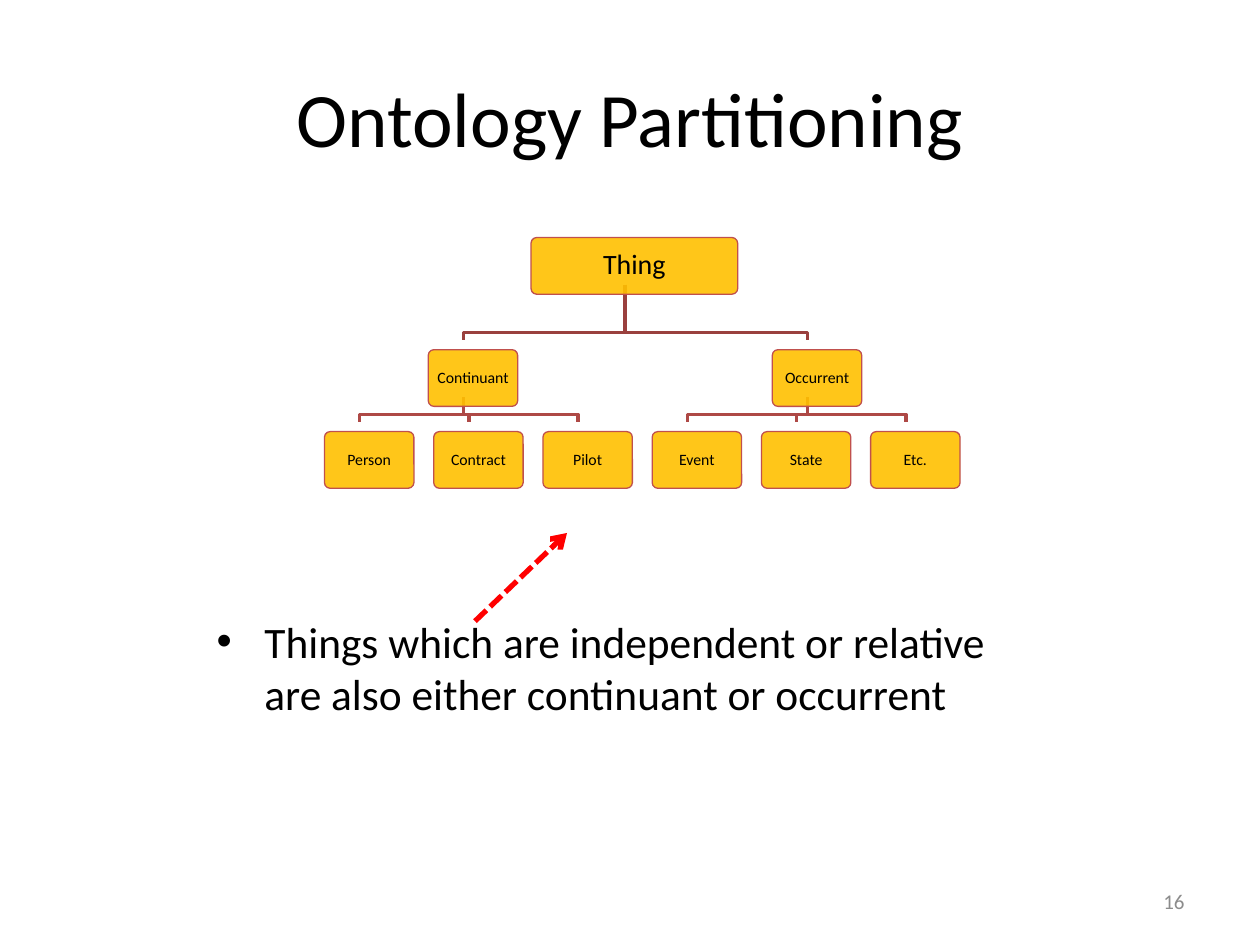
from lxml import etree
from pptx import Presentation
from pptx import util as u
from pptx.dml.color import RGBColor
from pptx.enum import dml, shapes, text
from pptx.oxml.ns import qn

BLACK = RGBColor(0x00, 0x00, 0x00)
WHITE = RGBColor(0xFF, 0xFF, 0xFF)
GREY = RGBColor(0x8C, 0x8C, 0x8C)
GOLD = RGBColor(0xFF, 0xC0, 0x00)
BRICK = RGBColor(0xC0, 0x50, 0x4D)
UPPER_LINK = RGBColor(0x9A, 0x40, 0x3E)
LOWER_LINK = RGBColor(0xAE, 0x49, 0x46)
RED = RGBColor(0xFF, 0x00, 0x00)

# Tree measures in inches; a node's column counts leaf steps from the left edge.
STEP = 0.867
CARD_W, CARD_H = 0.71, 0.45
ROOT_W = 1.64
ROW_TOPS = (1.81, 2.7, 3.35)
OFFSET = 0.075
BUS_GAP = 0.06
BRANCHES = (
    ("Continuant", 0.95, (("Person", 0), ("Contract", 1), ("Pilot", 2))),
    ("Occurrent", 4.1, (("Event", 3), ("State", 4), ("Etc.", 5))),
)


def add_child(parent, tag, **values):
    return etree.SubElement(parent, qn(tag), values)


def write(frame, words, size, color=BLACK, align=text.PP_ALIGN.CENTER,
          anchor=text.MSO_ANCHOR.MIDDLE):
    frame.word_wrap = True
    frame.vertical_anchor = anchor
    para = frame.paragraphs[0]
    para.alignment = align
    span = para.add_run()
    span.text = words
    for name, value in {"name": "Calibri", "size": u.Pt(size)}.items():
        setattr(span.font, name, value)
    span.font.color.rgb = color
    return para


def add_text(page, box, words, size, **style):
    area = page.shapes.add_textbox(*map(u.Inches, box))
    return write(area.text_frame, words, size, **style)


def add_card(group, left, top, width, color):
    box = map(u.Inches, (left, top, width, CARD_H))
    card = group.shapes.add_shape(shapes.MSO_SHAPE.ROUNDED_RECTANGLE, *box)
    card.adjustments[0] = 0.1
    card.shadow.inherit = False
    card.fill.solid()
    card.fill.fore_color.rgb = color
    card.line.fill.background()
    return card


def add_node(group, words, left, top, width=CARD_W, size=9, inset=0.05, backed=True):
    """Gold card with its label, set off from a white backing card."""
    if backed:
        add_card(group, left, top, width, WHITE)
    card = add_card(group, left + OFFSET, top + OFFSET, width, GOLD)
    color = card.fill._xPr.find(qn("a:solidFill"))[0]
    add_child(color, "a:alpha", val="90000")
    card.line.color.rgb = BRICK
    card.line.width = u.Pt(0.75)
    for side in ("left", "right", "top", "bottom"):
        setattr(card.text_frame, f"margin_{side}", u.Inches(inset))
    write(card.text_frame, words, size).line_spacing = 0.9


def add_link(group, start, end, color):
    """Elbow line that turns just above the child card."""
    bus = end[1] - BUS_GAP
    points = [start, (start[0], bus), (end[0], bus), end]
    corners = [tuple(map(u.Inches, point)) for point in points]
    outline = group.shapes.build_freeform(*corners[0])
    outline.add_line_segments(corners[1:], close=False)
    link = outline.convert_to_shape()
    link.shadow.inherit = False
    link.fill.background()
    link.line.color.rgb = color
    link.line.width = u.Pt(2)


def add_tree(page, left):
    group = page.shapes.add_group_shape()
    root_top, branch_top, leaf_top = ROW_TOPS
    root_left = 4.14
    root_foot = (root_left + ROOT_W / 2, root_top + CARD_H)

    def card_left(column):
        return left + column * STEP

    def middle(column):
        return card_left(column) + CARD_W / 2

    for _, column, leaves in BRANCHES:
        for _, leaf in leaves:
            add_link(group, (middle(column), branch_top + CARD_H),
                     (middle(leaf), leaf_top), LOWER_LINK)
        add_link(group, root_foot, (middle(column), branch_top), UPPER_LINK)

    add_node(group, "Thing", root_left, root_top, ROOT_W, 16, 0.08, backed=False)
    for name, column, leaves in BRANCHES:
        add_node(group, name, card_left(column), branch_top)
        for leaf_name, leaf in leaves:
            add_node(group, leaf_name, card_left(leaf), leaf_top)


def add_bullet(page, box, words):
    para = add_text(page, box, words, 24.8, align=text.PP_ALIGN.LEFT,
                    anchor=text.MSO_ANCHOR.TOP)
    para.space_before = u.Pt(5)
    props = para._p.get_or_add_pPr()
    indent = u.Inches(0.38)
    for name, value in {"marL": indent, "indent": -indent}.items():
        props.set(name, str(value))
    add_child(props, "a:buFont", typeface="Arial")
    add_child(props, "a:buChar", char="•")


def add_arrow(page, start, end):
    ends = map(u.Inches, (*start, *end))
    arrow = page.shapes.add_connector(shapes.MSO_CONNECTOR.STRAIGHT, *ends)
    arrow.line.color.rgb = RED
    arrow.line.width = u.Pt(3)
    arrow.line.dash_style = dml.MSO_LINE.SQUARE_DOT
    add_child(arrow.line._get_or_add_ln(), "a:tailEnd", type="arrow")
    add_child(arrow._element.spPr, "a:effectLst")


def main():
    deck = Presentation()
    deck.slide_width, deck.slide_height = u.Inches(10), u.Inches(7.5)
    page = deck.slides.add_slide(deck.slide_layouts[6])
    add_text(page, (0.5, 0.3, 9, 1.25), "Ontology Partitioning", 44)
    add_tree(page, left=2.5)
    add_bullet(page, (1.62, 4.83, 6.75, 1.14),
               "Things which are independent or relative are also either "
               "continuant or occurrent")
    add_arrow(page, (3.77, 4.93), (4.5, 4.23))
    add_text(page, (7.17, 6.95, 2.33, 0.4), "16", 12, color=GREY,
             align=text.PP_ALIGN.RIGHT)
    deck.save("out.pptx")


if __name__ == "__main__":
    main()
